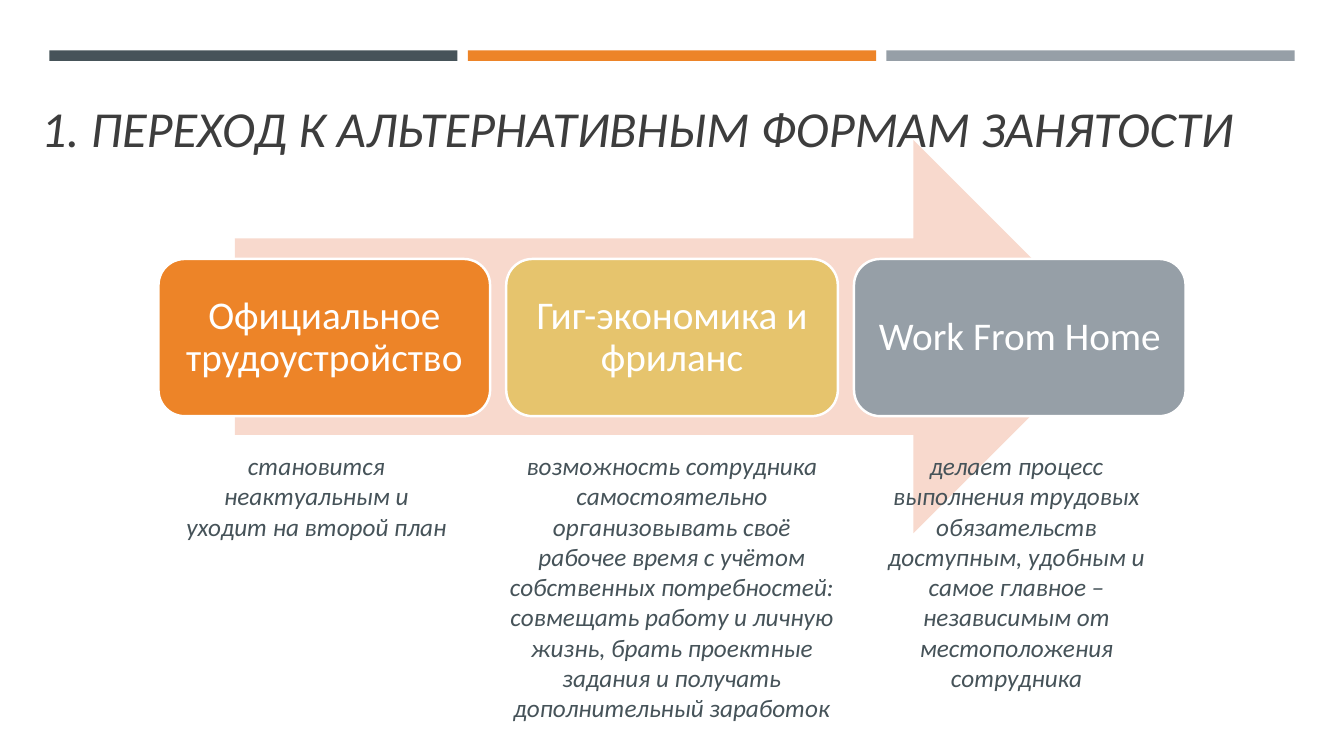
from pptx import Presentation
from pptx.dml.color import RGBColor as RGB
from pptx.enum.shapes import MSO_SHAPE as SHAPE
from pptx.enum.text import MSO_ANCHOR as ANCHOR, PP_ALIGN as ALIGN
from pptx.util import Pt

# Colours and font
SLATE = RGB(0x46, 0x53, 0x59)
ORANGE = RGB(0xED, 0x84, 0x28)
GOLD = RGB(0xE6, 0xC4, 0x6D)
GREY = RGB(0x96, 0x9F, 0xA7)
PEACH = RGB(0xF8, 0xD9, 0xCD)
INK = RGB(0x3D, 0x3D, 0x3D)
WHITE = RGB(0xFF, 0xFF, 0xFF)
FONT = "Calibri"

# Content
TITLE = "1. ПЕРЕХОД К АЛЬТЕРНАТИВНЫМ ФОРМАМ ЗАНЯТОСТИ"
BAR_COLOURS = [SLATE, ORANGE, GREY]
# heading, box colour, note, note left, note width, note height
STAGES = [
    ("Официальное трудоустройство", ORANGE,
     "становится неактуальным и уходит на второй план", 123.1, 205.9, 72.7),
    ("Гиг-экономика и фриланс", GOLD,
     "возможность сотрудника самостоятельно организовывать своё рабочее время "
     "с учётом собственных потребностей: совмещать работу и личную жизнь, брать "
     "проектные задания и получать дополнительный заработок", 355, 249.8, 203.8),
    ("Work From Home", GREY,
     "делает процесс выполнения трудовых обязательств доступным, удобным и "
     "самое главное – независимым от местоположения сотрудника", 615.6, 221, 181.4),
]

# Layout in points
BAR_LEFT, BAR_TOP, BAR_W, BAR_H, BAR_STEP = 35.2, 36, 291.6, 7.5, 299
BOX_LEFT, BOX_TOP, BOX_W, BOX_H, BOX_STEP = 113.2, 185, 236.9, 112.3, 248.4
BOX_INSET = 8.4
NOTE_TOP = 318.2


def add_block(s, kind, x, y, w, h, colour):
    sp = s.shapes.add_shape(kind, Pt(x), Pt(y), Pt(w), Pt(h))
    sp.shadow.inherit = False
    sp.fill.solid()
    sp.fill.fore_color.rgb = colour
    sp.line.fill.background()
    return sp


def write(tf, text, size, colour, italic=False, align=ALIGN.CENTER):
    tf.word_wrap = True
    p = tf.paragraphs[0]
    p.alignment = align
    r = p.add_run()
    r.text = text
    r.font.name = FONT
    r.font.size = Pt(size)
    r.font.italic = italic
    r.font.color.rgb = colour
    return p


def add_text(s, x, y, w, h, *args, **kwargs):
    tf = s.shapes.add_textbox(Pt(x), Pt(y), Pt(w), Pt(h)).text_frame
    write(tf, *args, **kwargs)
    return tf


prs = Presentation()
prs.slide_width, prs.slide_height = Pt(960), Pt(540)
s = prs.slides.add_slide(prs.slide_layouts[6])

# Bars across the top
for i, colour in enumerate(BAR_COLOURS):
    add_block(s, SHAPE.RECTANGLE, BAR_LEFT + i * BAR_STEP, BAR_TOP, BAR_W, BAR_H, colour)

# Title
tf = add_text(s, 22.3, 46.8, 905.8, 88.6, TITLE, 36, INK, italic=True, align=ALIGN.LEFT)
tf.vertical_anchor = ANCHOR.MIDDLE

# Arrow behind the stages
add_block(s, SHAPE.RIGHT_ARROW, 167.8, 100.1, 625, 280.8, PEACH)

# Stage boxes
for i, (heading, colour, *_) in enumerate(STAGES):
    sp = add_block(s, SHAPE.ROUNDED_RECTANGLE,
                   BOX_LEFT + i * BOX_STEP, BOX_TOP, BOX_W, BOX_H, colour)
    sp.line.color.rgb = WHITE
    sp.line.width = Pt(1.75)
    tf = sp.text_frame
    tf.vertical_anchor = ANCHOR.MIDDLE
    tf.margin_left = tf.margin_right = tf.margin_top = tf.margin_bottom = Pt(BOX_INSET)
    write(tf, heading, 28, WHITE).line_spacing = 0.9

# Notes under the boxes
for _, _, note, x, w, h in STAGES:
    add_text(s, x, NOTE_TOP, w, h, note, 18, SLATE, italic=True)

prs.save("out.pptx")
